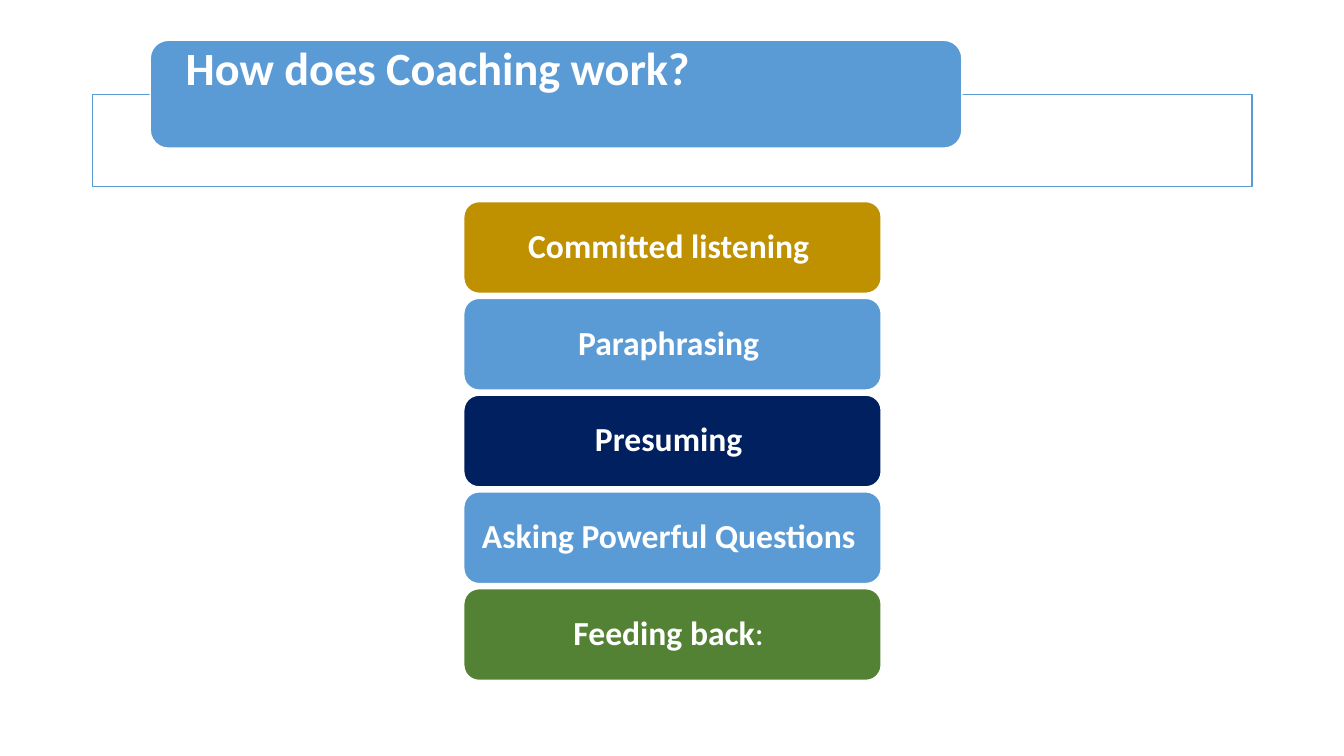
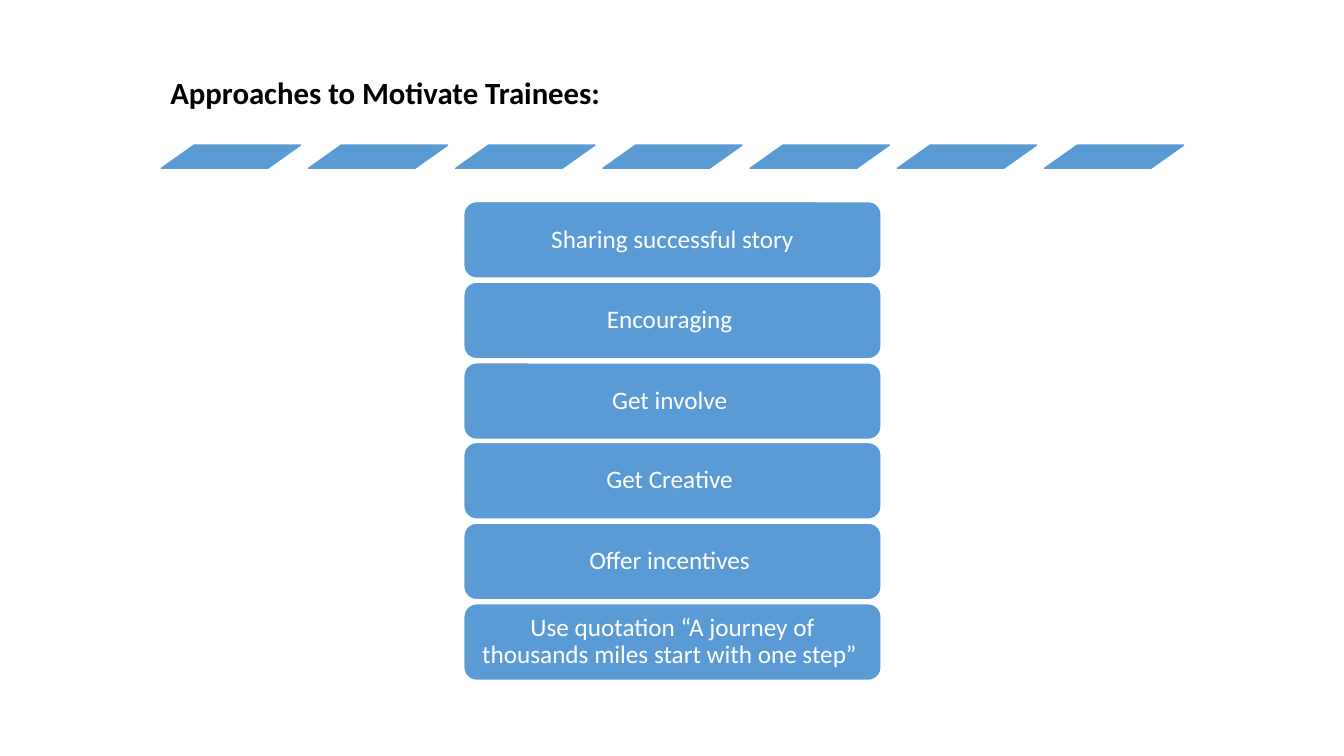
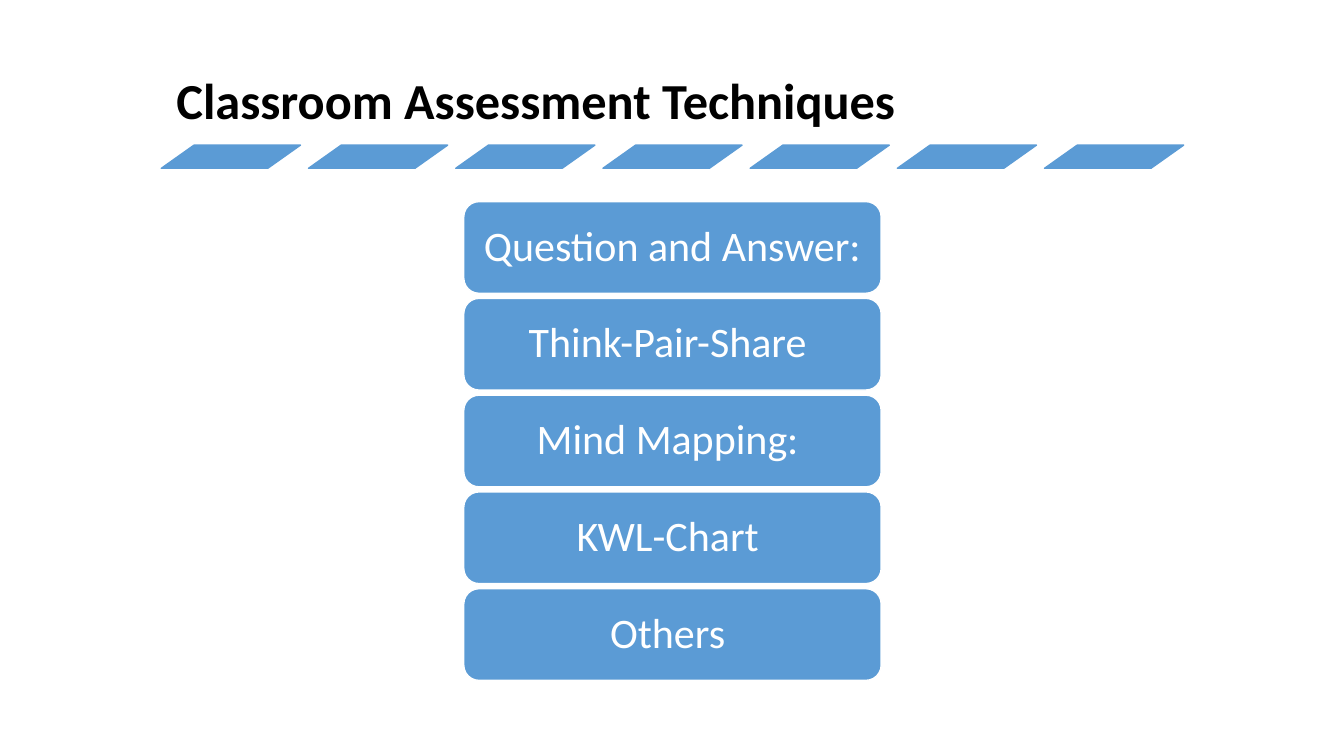
from dataclasses import dataclass
from typing import Any

from lxml import etree
from pptx import Presentation
from pptx import util as u
from pptx.dml.color import RGBColor
from pptx.enum import shapes, text
from pptx.oxml import ns

EMU_PER_PX = 9144
FONT = "Calibri"

WHITE = RGBColor(0xFF, 0xFF, 0xFF)
BLACK = RGBColor(0x00, 0x00, 0x00)
BLUE = RGBColor(0x5B, 0x9B, 0xD5)
GOLD = RGBColor(0xBF, 0x90, 0x00)
NAVY = RGBColor(0x00, 0x20, 0x60)
GREEN = RGBColor(0x54, 0x82, 0x35)

LEFT, CENTER = text.PP_ALIGN.LEFT, text.PP_ALIGN.CENTER
TOP, MIDDLE, BOTTOM = (
    text.MSO_ANCHOR.TOP,
    text.MSO_ANCHOR.MIDDLE,
    text.MSO_ANCHOR.BOTTOM,
)
RECTANGLE = shapes.MSO_SHAPE.RECTANGLE
ROUNDED = shapes.MSO_SHAPE.ROUNDED_RECTANGLE
PARALLELOGRAM = shapes.MSO_SHAPE.PARALLELOGRAM

STACK_LEFT, STACK_TOP, STACK_WIDTH, STACK_HEIGHT = 460, 200, 414, 475
STACK_GAP_RATIO = 0.05
STRIPE_COUNT, STRIPE_PITCH = 7, 146


@dataclass(frozen=True)
class Box:
    left: int
    top: int
    width: int
    height: int


@dataclass(frozen=True)
class Insets:
    left: int
    top: int
    right: int
    bottom: int


@dataclass(frozen=True)
class TextStyle:
    size: int
    color: RGBColor
    insets: Insets
    bold: bool = False
    align: Any = CENTER
    anchor: Any = MIDDLE


@dataclass(frozen=True)
class Item:
    label: str
    fill: RGBColor = BLUE
    plain_tail: str = ""


def px(length: int) -> u.Emu:
    return u.Emu(length * EMU_PER_PX)


def bounds(box: Box) -> tuple[u.Emu, ...]:
    return px(box.left), px(box.top), px(box.width), px(box.height)


def apply(target: Any, values: dict[str, Any]) -> None:
    for name, value in values.items():
        setattr(target, name, value)


def add_panel(slide: Any, kind: Any, box: Box, fill: RGBColor, line: RGBColor) -> Any:
    shape = slide.shapes.add_shape(kind, *bounds(box))
    shape.shadow.inherit = False
    shape.fill.solid()
    shape.fill.fore_color.rgb = fill
    shape.line.color.rgb = line
    shape.line.width = u.Pt(1)
    return shape


def write_text(shape: Any, style: TextStyle, label: str, plain_tail: str = "") -> None:
    frame = shape.text_frame
    apply(frame, {
        "word_wrap": True,
        "vertical_anchor": style.anchor,
        "margin_left": px(style.insets.left),
        "margin_top": px(style.insets.top),
        "margin_right": px(style.insets.right),
        "margin_bottom": px(style.insets.bottom),
    })
    paragraph = frame.paragraphs[0]
    apply(paragraph, {"alignment": style.align, "line_spacing": 0.9})
    for words, bold in ((label, style.bold), (plain_tail, False)):
        if words:
            run = paragraph.add_run()
            run.text = words
            apply(run.font, {"name": FONT, "size": u.Pt(style.size), "bold": bold})
            run.font.color.rgb = style.color


def add_stack(slide: Any, items: list[Item], style: TextStyle) -> None:
    count = len(items)
    height = STACK_HEIGHT / (count + STACK_GAP_RATIO * (count - 1))
    pitch = height * (1 + STACK_GAP_RATIO)
    for index, item in enumerate(items):
        top = round(STACK_TOP + index * pitch)
        box = Box(STACK_LEFT, top, STACK_WIDTH, round(height))
        shape = add_panel(slide, ROUNDED, box, item.fill, WHITE)
        write_text(shape, style, item.label, item.plain_tail)


def add_framed_title(slide: Any, title: str) -> None:
    frame = add_panel(slide, RECTANGLE, Box(92, 94, 1150, 91), WHITE, BLUE)
    color = frame.fill._xPr.find(ns.qn("a:solidFill"))[0]
    etree.SubElement(color, ns.qn("a:alpha"), val="90000")
    banner = add_panel(slide, ROUNDED, Box(149, 40, 805, 107), BLUE, WHITE)
    style = TextStyle(33, WHITE, Insets(30, 0, 30, 0), True, LEFT, TOP)
    write_text(banner, style, title)


def add_striped_title(slide: Any, title: str, size: int, insets: Insets) -> None:
    heading = slide.shapes.add_textbox(*bounds(Box(160, 57, 957, 87)))
    write_text(heading, TextStyle(size, BLACK, insets, True, LEFT, BOTTOM), title)
    for index in range(STRIPE_COUNT):
        box = Box(160 + index * STRIPE_PITCH, 144, 138, 23)
        stripe = add_panel(slide, PARALLELOGRAM, box, BLUE, BLUE)
        stripe.adjustments[0] = 1.41


def add_coaching_slide(slide: Any) -> None:
    add_framed_title(slide, "How does Coaching work?")
    items = [
        Item("Committed listening ", GOLD),
        Item("Paraphrasing "),
        Item("Presuming ", NAVY),
        Item("Asking Powerful Questions "),
        Item("Feeding back", GREEN, ": "),
    ]
    add_stack(slide, items, TextStyle(24, WHITE, Insets(10, 5, 10, 5), True))


def add_motivation_slide(slide: Any) -> None:
    add_striped_title(
        slide, "Approaches to Motivate Trainees:", 22, Insets(9, 9, 9, 43)
    )
    labels = [
        "Sharing successful story",
        "Encouraging ",
        "Get involve ",
        "Get Creative ",
        "Offer incentives ",
        "Use quotation “A journey of thousands miles start with one step” ",
    ]
    style = TextStyle(18, WHITE, Insets(7, 4, 7, 4))
    add_stack(slide, [Item(label) for label in labels], style)


def add_assessment_slide(slide: Any) -> None:
    add_striped_title(
        slide, "Classroom Assessment Techniques", 36, Insets(15, 15, 15, 15)
    )
    labels = [
        "Question and Answer: ",
        "Think-Pair-Share ",
        "Mind Mapping: ",
        "KWL-Chart ",
        "Others ",
    ]
    style = TextStyle(30, WHITE, Insets(12, 6, 12, 6))
    add_stack(slide, [Item(label) for label in labels], style)


def main() -> None:
    presentation = Presentation()
    apply(presentation, {"slide_width": px(1333), "slide_height": px(750)})
    blank = presentation.slide_layouts[6]
    for build in (add_coaching_slide, add_motivation_slide, add_assessment_slide):
        build(presentation.slides.add_slide(blank))
    presentation.save("out.pptx")


if __name__ == "__main__":
    main()
